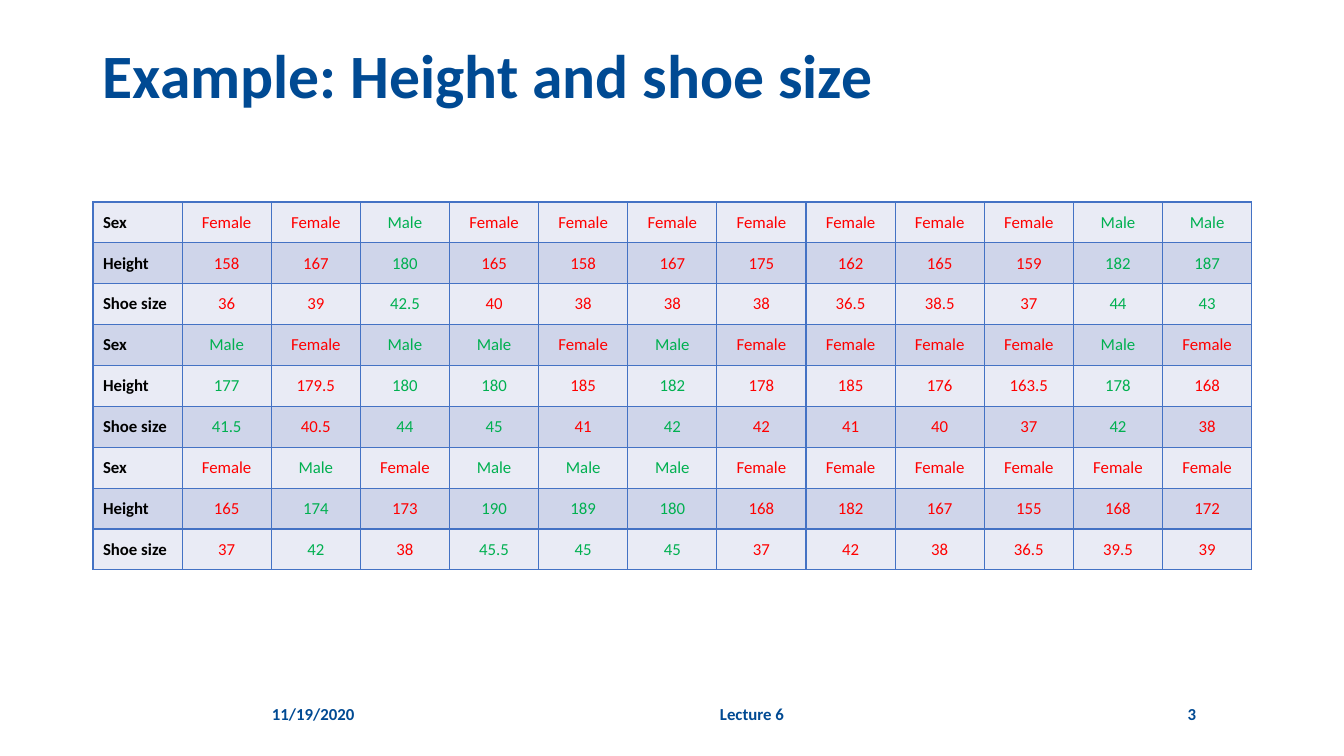
from pptx import Presentation
from pptx.dml.color import RGBColor
from pptx.enum.text import MSO_ANCHOR, PP_ALIGN
from pptx.oxml import parse_xml
from pptx.oxml.ns import nsdecls
from pptx.util import Pt

EMU_PER_PX = 914400 / 100.8
NAVY = RGBColor(0x00, 0x4A, 0x93)
BLACK = RGBColor(0x00, 0x00, 0x00)
RED = RGBColor(0xFF, 0x00, 0x00)
GREEN = RGBColor(0x00, 0xB0, 0x50)
GRID_BLUE = RGBColor(0x44, 0x72, 0xC4)
BANDS = (RGBColor(0xE9, 0xEB, 0xF5), RGBColor(0xCF, 0xD5, 0xEA))

SEX_NAMES = {"F": "Female", "M": "Male"}
SEX_COLOURS = {"F": RED, "M": GREEN}

# One group per three table rows: sex, height, shoe size
GROUPS = [
    ("F F M F F F F F F F M M",
     "158 167 180 165 158 167 175 162 165 159 182 187",
     "36 39 42.5 40 38 38 38 36.5 38.5 37 44 43"),
    ("M F M M F M F F F F M F",
     "177 179.5 180 180 185 182 178 185 176 163.5 178 168",
     "41.5 40.5 44 45 41 42 42 41 40 37 42 38"),
    ("F M F M M M F F F F F F",
     "165 174 173 190 189 180 168 182 167 155 168 172",
     "37 42 38 45.5 45 45 37 42 38 36.5 39.5 39"),
]


def px(length):
    return round(length * EMU_PER_PX)


class SlideBuilder:
    def __init__(self, deck, font_name):
        self.page = deck.slides.add_slide(deck.slide_layouts[6])
        self.font_name = font_name

    def add_span(self, paragraph, text, colour, align=PP_ALIGN.LEFT, **font_values):
        paragraph.alignment = align
        span = paragraph.add_run()
        span.text = text
        values = {"name": self.font_name, "size": Pt(12), "bold": True}
        for name, value in (values | font_values).items():
            setattr(span.font, name, value)
        span.font.color.rgb = colour

    def add_text(self, text, place, anchor=MSO_ANCHOR.MIDDLE, line_spacing=None, **style):
        box = self.page.shapes.add_textbox(*map(px, place))
        frame = box.text_frame
        frame.word_wrap = True
        frame.vertical_anchor = anchor
        paragraph = frame.paragraphs[0]
        paragraph.line_spacing = line_spacing
        self.add_span(paragraph, text, NAVY, **style)

    def add_borders(self, cell):
        properties = cell._tc.get_or_add_tcPr()
        for side in "LRTB":
            properties.append(parse_xml(
                f'<a:ln{side} {nsdecls("a")} w="{Pt(1)}"><a:solidFill>'
                f'<a:srgbClr val="{GRID_BLUE}"/></a:solidFill></a:ln{side}>'))

    def add_table(self, rows, place):
        """Draw rows of (text, colour) pairs; the first of each row is its label."""
        frame = self.page.shapes.add_table(len(rows), len(rows[0]), *map(px, place))
        table = frame.table
        table.first_row = table.horz_banding = False
        for row_index, row in enumerate(rows):
            for column, (text, colour) in enumerate(row):
                cell = table.cell(row_index, column)
                self.add_borders(cell)
                cell.fill.solid()
                cell.fill.fore_color.rgb = BANDS[row_index % 2]
                cell.vertical_anchor = MSO_ANCHOR.MIDDLE
                align = PP_ALIGN.CENTER if column else PP_ALIGN.LEFT
                self.add_span(cell.text_frame.paragraphs[0], text, colour, align,
                              bold=column == 0)


def measurement_rows():
    rows = []
    for sexes, heights, shoe_sizes in GROUPS:
        codes = sexes.split()
        colours = [SEX_COLOURS[code] for code in codes]
        names = [SEX_NAMES[code] for code in codes]
        lines = {"Sex": names, "Height": heights.split(), "Shoe size": shoe_sizes.split()}
        for label, values in lines.items():
            rows.append([(label, BLACK), *zip(values, colours)])
    return rows


def main():
    deck = Presentation()
    deck.slide_width, deck.slide_height = px(1344), px(756)
    builder = SlideBuilder(deck, "Calibri")
    builder.add_text("Example: Height and shoe size", (93, 40, 1159, 146),
                     anchor=MSO_ANCHOR.TOP, line_spacing=0.9, size=Pt(44))
    builder.add_table(measurement_rows(), (93, 202, 1159, 368))
    builder.add_text("11/19/2020", (262, 694, 132, 40))
    builder.add_text("Lecture 6", (410, 694, 684, 40), align=PP_ALIGN.CENTER)
    builder.add_text("3", (1111, 694, 95, 40), align=PP_ALIGN.RIGHT)
    deck.save("out.pptx")


if __name__ == "__main__":
    main()
